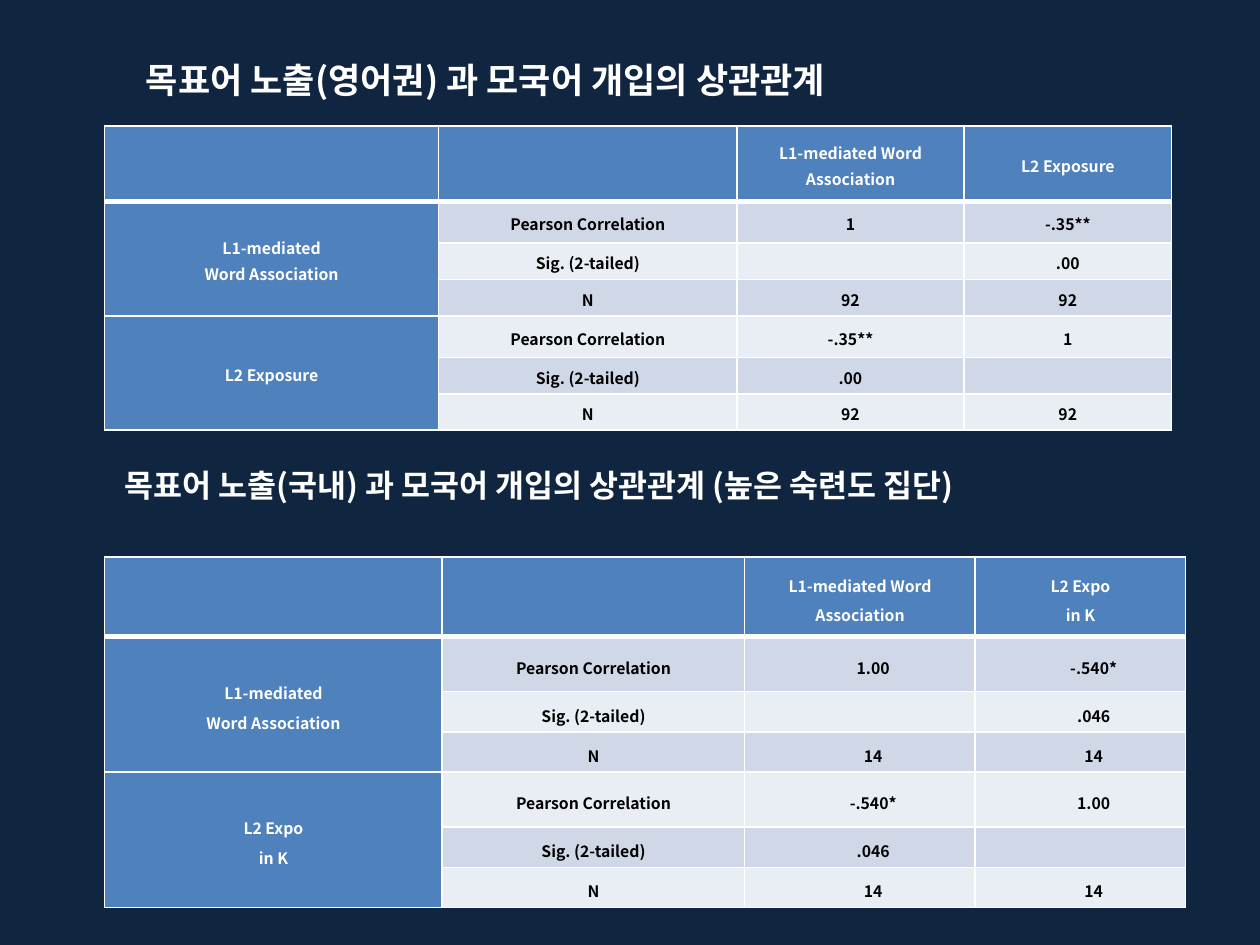
from dataclasses import dataclass

import lxml.etree
import pptx
import pptx.dml.color
import pptx.enum.text
import pptx.oxml.ns
import pptx.util

NAVY = pptx.dml.color.RGBColor(0x10, 0x25, 0x3F)
BLUE = pptx.dml.color.RGBColor(0x4F, 0x81, 0xBD)
BANDS = (
    pptx.dml.color.RGBColor(0xD0, 0xD8, 0xE8),
    pptx.dml.color.RGBColor(0xE9, 0xED, 0xF4),
)
WHITE = pptx.dml.color.RGBColor(0xFF, 0xFF, 0xFF)
BLACK = pptx.dml.color.RGBColor(0x00, 0x00, 0x00)
FONT = "Noto Sans CJK KR"
WIDTH = pptx.util.Inches(10)
HEIGHT = pptx.util.Inches(7.5)
CENTER = pptx.enum.text.PP_ALIGN.CENTER
MIDDLE = pptx.enum.text.MSO_ANCHOR.MIDDLE
STATISTICS = ("Pearson Correlation", "Sig. (2-tailed)", "N")


@dataclass(frozen=True)
class Heading:
    text: str
    left: float
    top: float
    width: float
    height: float
    size: int
    wrap: bool
    anchor: pptx.enum.text.MSO_ANCHOR


@dataclass(frozen=True)
class CorrelationTable:
    top: float
    columns: tuple[float, ...]
    header_row: float
    statistic_rows: tuple[float, ...]
    exposure: str
    identity: str
    correlation: str
    significance: str
    count: str
    spacing: float
    margin: float


HEADINGS = (
    Heading("목표어 노출(영어권) 과 모국어 개입의 상관관계",
            0.092, 0.055, 0.626, 0.059, 20, False, MIDDLE),
    Heading("목표어 노출(국내) 과 모국어 개입의 상관관계 (높은 숙련도 집단)",
            0.075, 0.487, 0.908, 0.053, 18, True, pptx.enum.text.MSO_ANCHOR.TOP),
)
TABLES = (
    CorrelationTable(1 / 7.5, (0.265, 0.237, 0.18, 0.165), 0.6 / 7.5,
                     (0.33 / 7.5, 0.27 / 7.5, 0.25 / 7.5),
                     "L2 Exposure", "1", "-.35**", ".00", "92", 1.15, 0),
    CorrelationTable(4.42 / 7.5, (0.268, 0.24, 0.183, 0.167), 0.63 / 7.5,
                     (0.44 / 7.5, 0.32 / 7.5, 0.3 / 7.5),
                     "L2 Expo\nin K", "1.00", "-.540*", ".046", "14", 1.3, 0.021),
)


def across(share: float) -> int:
    return round(WIDTH * share)


def down(share: float) -> int:
    return round(HEIGHT * share)


def write_text(frame, text: str, *, size: int, color, align=None,
               spacing: float | None = None, margin: float = 0, indent: float = 0) -> None:
    for index, line in enumerate(text.split("\n")):
        paragraph = frame.add_paragraph() if index else frame.paragraphs[0]
        paragraph.alignment = align
        paragraph.line_spacing = spacing
        properties = paragraph._p.get_or_add_pPr()
        properties.set("marL", str(across(margin)))
        properties.set("indent", str(across(indent)))
        if not line:
            ending = lxml.etree.SubElement(
                paragraph._p, pptx.oxml.ns.qn("a:endParaRPr"))
            ending.set("sz", str(size * 100))
            continue
        run = paragraph.add_run()
        run.text = line
        run.font.size = pptx.util.Pt(size)
        run.font.name = FONT
        run.font.bold = True
        run.font.color.rgb = color
        for script in ("a:ea", "a:cs"):
            typeface = lxml.etree.SubElement(
                run._r.get_or_add_rPr(), pptx.oxml.ns.qn(script))
            typeface.set("typeface", FONT)


def draw_borders(cell, row: int) -> None:
    properties = cell._tc.get_or_add_tcPr()
    widths = {"L": 1, "R": 1, "T": 3 if row == 1 else 1, "B": 3 if row == 0 else 1}
    for side, width in widths.items():
        line = lxml.etree.SubElement(properties, pptx.oxml.ns.qn(f"a:ln{side}"))
        line.set("w", str(pptx.util.Pt(width)))
        fill = lxml.etree.SubElement(line, pptx.oxml.ns.qn("a:solidFill"))
        color = lxml.etree.SubElement(fill, pptx.oxml.ns.qn("a:srgbClr"))
        color.set("val", str(WHITE))


def table_rows(layout: CorrelationTable) -> list[tuple[str, ...]]:
    same = (layout.identity, "", layout.count)
    other = (layout.correlation, layout.significance, layout.count)
    groups = (
        ("L1-mediated\nWord Association", same, other),
        (layout.exposure, other, same),
    )
    rows = [("", "", "L1-mediated Word Association", layout.exposure)]
    for label, first, second in groups:
        labels = (label, "", "")
        rows.extend(zip(labels, STATISTICS, first, second))
    return rows


def draw_table(slide, layout: CorrelationTable) -> None:
    heights = (layout.header_row, *layout.statistic_rows * 2)
    rows = table_rows(layout)
    table = slide.shapes.add_table(
        len(rows), len(layout.columns), across(0.083), down(layout.top),
        across(sum(layout.columns)), down(sum(heights))).table
    table.horz_banding = False
    for column, width in zip(table.columns, layout.columns):
        column.width = across(width)
    for row, height in zip(table.rows, heights):
        row.height = down(height)
    for row, texts in enumerate(rows):
        for column, text in enumerate(texts):
            cell = table.cell(row, column)
            heading = row == 0 or column == 0
            draw_borders(cell, row)
            cell.fill.solid()
            cell.fill.fore_color.rgb = BLUE if heading else BANDS[(row - 1) % 2]
            cell.vertical_anchor = MIDDLE
            cell.margin_left = cell.margin_right = 0
            cell.margin_top = cell.margin_bottom = across(0.004)
            value = row > 0 and column > 1
            write_text(cell.text_frame, text, size=9,
                       color=WHITE if heading else BLACK, align=CENTER,
                       spacing=layout.spacing, margin=layout.margin if value else 0)
    for start in (1, 4):
        table.cell(start, 0).merge(table.cell(start + 2, 0))


def draw_heading(slide, heading: Heading) -> None:
    shape = slide.shapes.add_textbox(
        across(heading.left), down(heading.top),
        across(heading.width), down(heading.height))
    frame = shape.text_frame
    frame.word_wrap = heading.wrap
    frame.auto_size = pptx.enum.text.MSO_AUTO_SIZE.SHAPE_TO_FIT_TEXT
    frame.vertical_anchor = heading.anchor
    write_text(frame, heading.text, size=heading.size, color=WHITE, indent=0.014)


def main() -> None:
    presentation = pptx.Presentation()
    presentation.slide_width = WIDTH
    presentation.slide_height = HEIGHT
    slide = presentation.slides.add_slide(presentation.slide_layouts[6])
    slide.background.fill.solid()
    slide.background.fill.fore_color.rgb = NAVY
    for layout in TABLES:
        draw_table(slide, layout)
    for heading in HEADINGS:
        draw_heading(slide, heading)
    presentation.save("out.pptx")


if __name__ == "__main__":
    main()
